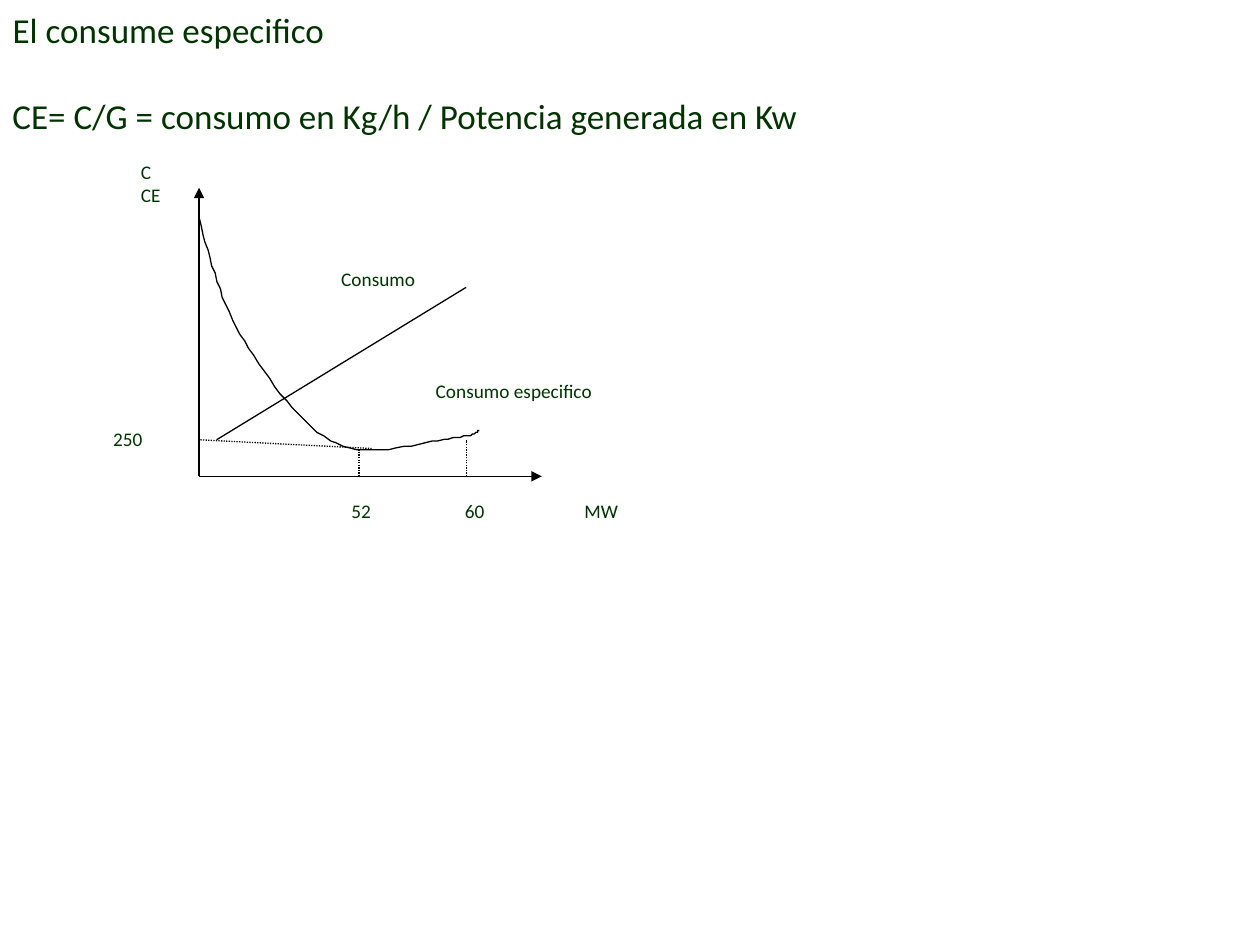
from pptx import Presentation
from pptx import util as u
from pptx.dml.color import RGBColor
from pptx.enum import dml, shapes, text
from pptx.oxml.ns import qn
from lxml import etree

Pt = u.Pt
INK, GREEN, WHITE = "000000", "003300", "FFFFFF"


def color(value):
    return RGBColor.from_string(value)


def write(tf, content, size):
    tf.text = content
    tf.vertical_anchor = text.MSO_ANCHOR.TOP if size < 20 else text.MSO_ANCHOR.MIDDLE
    for p in tf.paragraphs:
        p.alignment = text.PP_ALIGN.LEFT
        p.font.name = "Calibri"
        p.font.size = Pt(size)
        p.font.color.rgb = color(GREEN)


prs = Presentation()
prs.slide_width, prs.slide_height = Pt(720), Pt(540)
s = prs.slides.add_slide(prs.slide_layouts[5])

origin_x, origin_y = 113.8, 272.2
level_y, min_x, min_y, max_x = 251.3, 205.2, 256.3, 266.4
lines = [
    (origin_x, origin_y, origin_x, 107.3, "axis"),
    (origin_x, origin_y, 309.6, origin_y, "axis"),
    (123.8, level_y, max_x, 164.2, "solid"),
    (212.4, min_y, origin_x, level_y, "dotted"),
    (min_x, origin_y, min_x, min_y, "dotted"),
    (max_x, origin_y, max_x, level_y, "dotted"),
]
for x1, y1, x2, y2, style in lines:
    c = s.shapes.add_connector(shapes.MSO_CONNECTOR.STRAIGHT, Pt(x1), Pt(y1), Pt(x2), Pt(y2))
    c.line.color.rgb = color(INK)
    c.line.width = Pt(0.75)
    if style == "dotted":
        c.line.dash_style = dml.MSO_LINE.ROUND_DOT
    if style == "axis":
        etree.SubElement(c.line._get_or_add_ln(), qn("a:tailEnd"), type="triangle")
    etree.SubElement(c._element.spPr, qn("a:effectLst"))

start = (113.8, 124.6)
curves = [
    ((120.2, 149), (126.7, 173.5), (139.7, 195.1)),
    ((153.4, 216.7), (172.8, 244.8), (192.2, 253.4)),
    ((211.7, 262.8), (242.6, 252), (256.3, 250.6)),
    ((270, 249.1), (272.2, 247.7), (274.3, 245.5)),
]
steps = 16
points = []
p0 = start
for p1, p2, p3 in curves:
    for i in range(1, steps + 1):
        t = i / steps
        points.append(tuple(
            (1 - t) ** 3 * a + 3 * (1 - t) ** 2 * t * b + 3 * (1 - t) * t ** 2 * c + t ** 3 * d
            for a, b, c, d in zip(p0, p1, p2, p3)))
    p0 = p3
fb = s.shapes.build_freeform(*start, scale=Pt(1))
fb.add_line_segments(points, close=False)
curve = fb.convert_to_shape()
curve.shadow.inherit = False
curve.fill.background()
curve.line.color.rgb = color(INK)
curve.line.width = Pt(0.75)

labels = [
    ("C\nCE", 73.4, 87.8, 32.4, 51.8),
    ("MW", 326.9, 281.5, 54.7, 29.5),
    ("250", 57.6, 240.5, 48.2, 23),
    ("52", 193.7, 281.5, 34.6, 19.4),
    ("60", 258.5, 281.5, 32.4, 19.4),
    ("Consumo", 187.9, 149, 61.9, 23.8),
    ("Consumo especifico", 241.9, 213.1, 113, 19.4),
]
for content, x, y, w, h in labels:
    sp = s.shapes.add_shape(shapes.MSO_SHAPE.RECTANGLE, Pt(x), Pt(y), Pt(w), Pt(h))
    sp.shadow.inherit = False
    sp.fill.solid()
    sp.fill.fore_color.rgb = color(WHITE)
    sp.line.color.rgb = color(WHITE)
    sp.line.width = Pt(0.75)
    write(sp.text_frame, content, 11)

title = s.shapes.title
title.left, title.top, title.width, title.height = Pt(0), Pt(0), Pt(194.4), Pt(34)
write(title.text_frame, "El consume especifico", 20)
title.text_frame.word_wrap = False

formula = s.shapes.add_textbox(Pt(0), Pt(50), Pt(467.3), Pt(32))
write(formula.text_frame, "CE= C/G = consumo en Kg/h / Potencia generada en Kw", 20)
formula.text_frame.word_wrap = False

prs.save("out.pptx")
